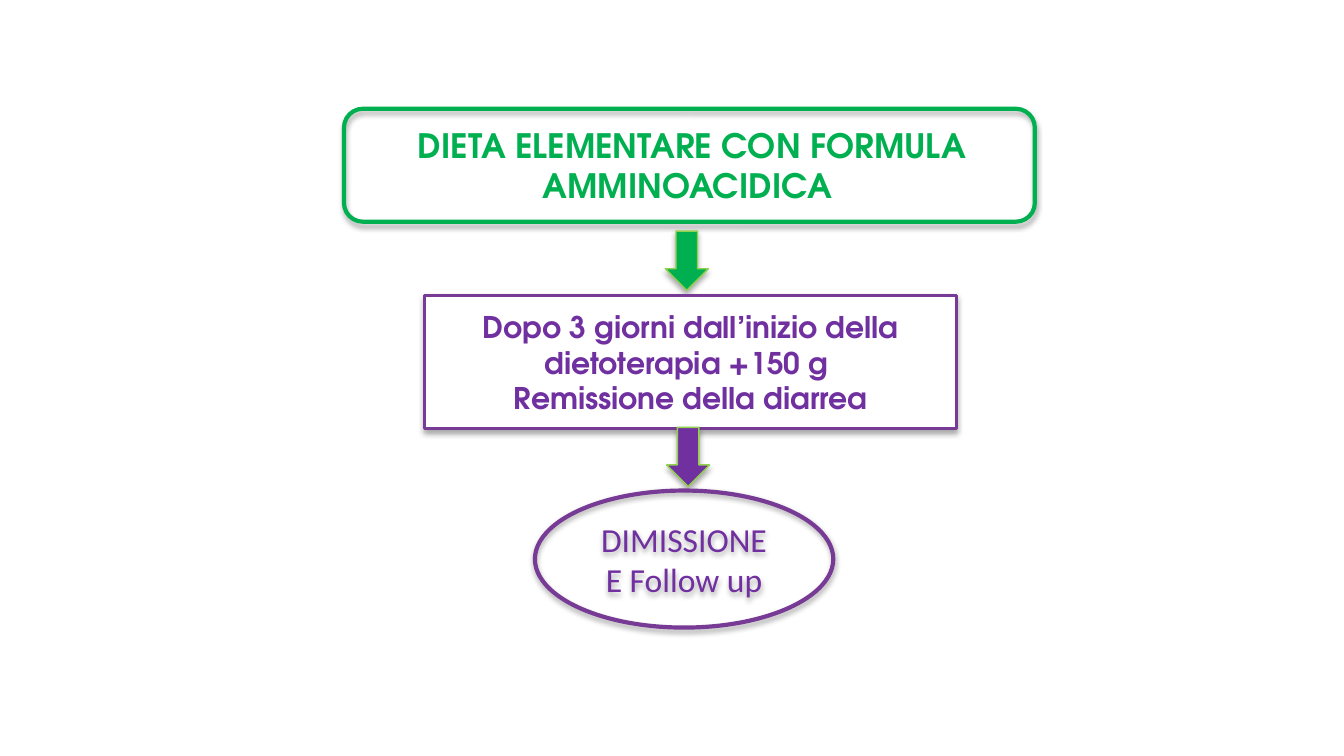
import pptx
import pptx.dml.color
import pptx.enum.shapes
import pptx.enum.text
import pptx.oxml
import pptx.oxml.ns
import pptx.util

Inches = pptx.util.Inches
Pt = pptx.util.Pt
KIND = pptx.enum.shapes.MSO_SHAPE
ANCHOR = pptx.enum.text.MSO_ANCHOR

GREEN, PURPLE, VIOLET, LIME = "00B050", "7030A0", "773B96", "92D050"
HEADING_FONT, BODY_FONT = "TeX Gyre Adventor", "Calibri"

DIET = ["DIETA ELEMENTARE CON FORMULA AMMINOACIDICA "]
REMISSION = ["Dopo 3 giorni dall’inizio della dietoterapia +150 g ", "Remissione della diarrea"]
DISCHARGE = ["DIMISSIONE", "E Follow up"]

STEPS = [
    dict(kind=KIND.ROUNDED_RECTANGLE, box=(2.56, 0.81, 5.14, 0.84), line=(GREEN, 2.25)),
    dict(kind=KIND.DOWN_ARROW, box=(4.95, 1.72, 0.32, 0.44), fill=GREEN, line=(LIME, 0.75)),
    dict(kind=KIND.RECTANGLE, box=(3.16, 2.2, 3.96, 0.99), fill="FFFFFF", line=(VIOLET, 1.5),
         text=(REMISSION, HEADING_FONT, 16, PURPLE, True)),
    dict(kind=KIND.DOWN_ARROW, box=(4.96, 3.18, 0.32, 0.44), fill=PURPLE, line=(LIME, 0.75)),
    dict(kind=KIND.OVAL, box=(3.98, 3.65, 2.22, 1.02), line=(VIOLET, 2.25),
         text=(DISCHARGE, BODY_FONT, 18, PURPLE, False)),
]

SHADOW = (
    f'<a:outerShdw {pptx.oxml.ns.nsdecls("a")} blurRad="{Pt(3.1)}" dist="{Pt(1.8)}" '
    'dir="5400000" rotWithShape="0"><a:srgbClr val="000000">'
    '<a:alpha val="35000"/></a:srgbClr></a:outerShdw>'
)


def paint(color_format, color):
    color_format.rgb = pptx.dml.color.RGBColor.from_string(color)


def write(frame, lines, font, size, color, bold, anchor=ANCHOR.MIDDLE):
    frame.text = "\n".join(lines)
    frame.word_wrap = True
    frame.vertical_anchor = anchor
    for paragraph in frame.paragraphs:
        paragraph.alignment = pptx.enum.text.PP_ALIGN.CENTER
        paragraph.font.name = font
        paragraph.font.size = Pt(size)
        paragraph.font.bold = bold
        paint(paragraph.font.color, color)


def add_step(slide, kind, box, line, fill=None, text=None):
    step = slide.shapes.add_shape(kind, *map(Inches, box))
    if fill:
        step.fill.solid()
        paint(step.fill.fore_color, fill)
    else:
        step.fill.background()
    line_color, width = line
    paint(step.line.color, line_color)
    step.line.width = Pt(width)
    step.shadow.inherit = False
    effects = step._element.spPr.find(pptx.oxml.ns.qn("a:effectLst"))
    effects.append(pptx.oxml.parse_xml(SHADOW))
    if text:
        write(step.text_frame, *text)


def main():
    deck = pptx.Presentation()
    deck.slide_width = Inches(10)
    deck.slide_height = deck.slide_width * 9 // 16
    slide = deck.slides.add_slide(deck.slide_layouts[5])

    diet = slide.shapes.title
    diet.left, diet.top, diet.width, diet.height = map(Inches, (2.58, 0.88, 5.14, 0.71))
    write(diet.text_frame, DIET, HEADING_FONT, 18, GREEN, True, ANCHOR.TOP)
    diet.text_frame.auto_size = pptx.enum.text.MSO_AUTO_SIZE.NONE

    for step in STEPS:
        add_step(slide, **step)
    deck.save("out.pptx")


if __name__ == "__main__":
    main()
